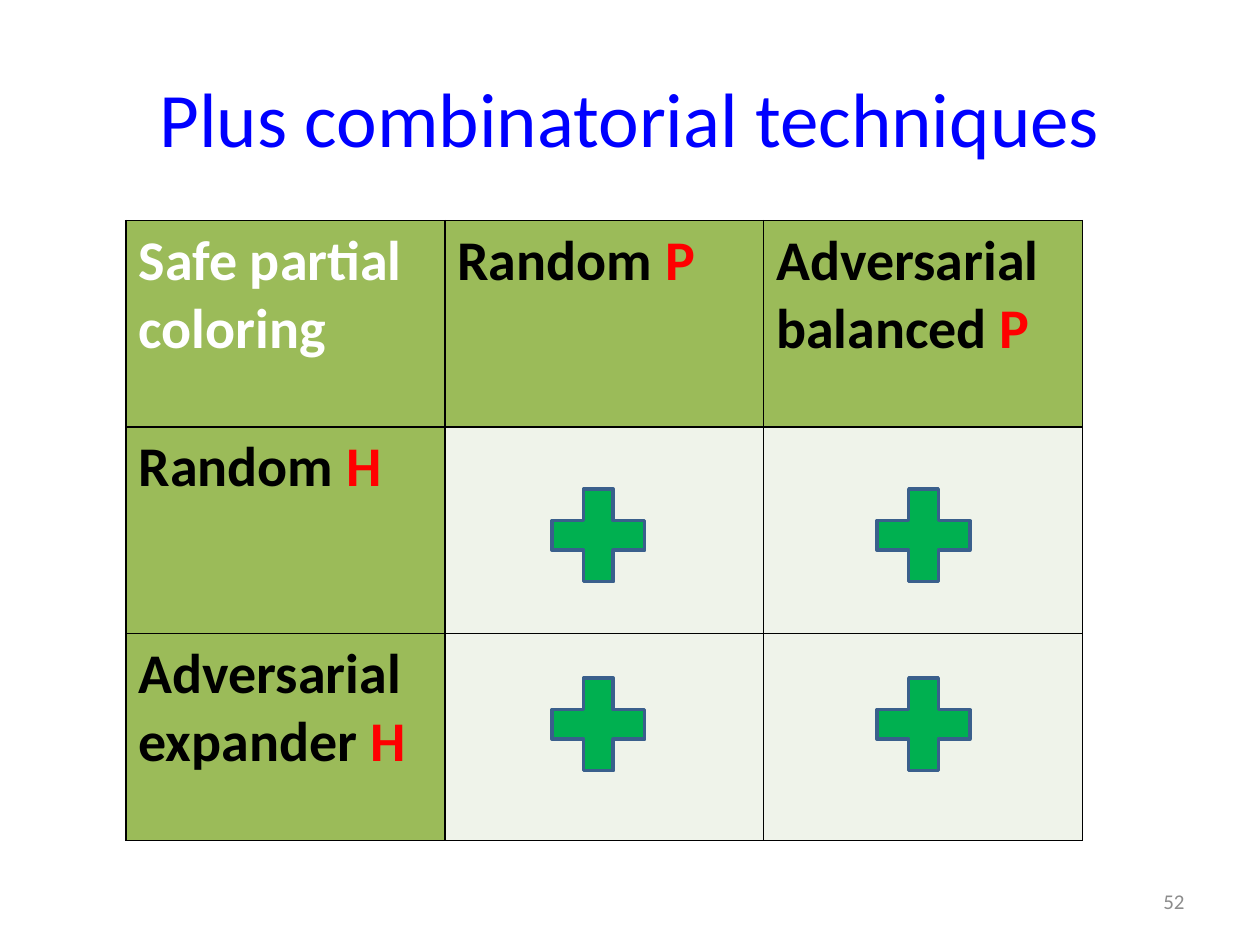
from dataclasses import dataclass
from itertools import product

from lxml.etree import SubElement
from pptx import Presentation
from pptx.dml.color import RGBColor as Color
from pptx.enum.shapes import MSO_SHAPE as Shape
from pptx.enum.text import MSO_ANCHOR as Anchor, PP_ALIGN as Align
from pptx.oxml.ns import qn
from pptx.util import Inches, Pt


@dataclass(frozen=True)
class Theme:
    font: str = "Calibri"
    title_size: int = 44
    table_size: int = 32
    number_size: int = 12
    title: str = "0000FF"
    number: str = "8C8C8C"
    light: str = "FFFFFF"
    dark: str = "000000"
    accent: str = "FF0000"
    header_fill: str = "9BBB59"
    body_fill: str = "EFF3EA"
    plus_fill: str = "00B050"
    plus_line: str = "3A5F8C"


THEME = Theme()
COLUMN_WIDTH, ROW_HEIGHT = 2.53, 1.64
# Header cells by (row, column): runs of text and colour
HEADERS = {
    (0, 0): [("Safe partial coloring", THEME.light)],
    (0, 1): [("Random ", THEME.dark), ("P", THEME.accent)],
    (0, 2): [("Adversarial balanced ", THEME.dark), ("P", THEME.accent)],
    (1, 0): [("Random ", THEME.dark), ("H", THEME.accent)],
    (2, 0): [("Adversarial expander ", THEME.dark), ("H", THEME.accent)],
}


def set_all(target, values):
    for name, value in values.items():
        setattr(target, name, value)


def write(frame, runs, size, bold=False, align=None):
    """Fill the first paragraph with (text, colour) runs."""
    para = frame.paragraphs[0]
    para.alignment = align
    for text, color in runs:
        span = para.add_run()
        span.text = text
        set_all(span.font, {"name": THEME.font, "size": Pt(size), "bold": bold})
        span.font.color.rgb = Color.from_string(color)


def place(shape, left, top, width, height):
    set_all(shape, {"left": Inches(left), "top": Inches(top),
                    "width": Inches(width), "height": Inches(height)})


def add_title(page, text):
    title = page.shapes.title
    place(title, 0.5, 0.3, 9, 1.25)
    title.text_frame.vertical_anchor = Anchor.MIDDLE
    write(title.text_frame, [(text, THEME.title)], THEME.title_size, align=Align.CENTER)


def add_page_number(page, text):
    box = page.shapes.add_textbox(Inches(7.17), Inches(6.95), Inches(2.33), Inches(0.4))
    set_all(box.text_frame, {"word_wrap": True, "vertical_anchor": Anchor.MIDDLE})
    write(box.text_frame, [(text, THEME.number)], THEME.number_size, align=Align.RIGHT)


def style_cell(cell, fill):
    """Draw thin borders on all sides, then the fill, in schema order."""
    properties = cell._tc.get_or_add_tcPr()
    for side in ("a:lnL", "a:lnR", "a:lnT", "a:lnB"):
        line = SubElement(properties, qn(side), w=str(Pt(1)))
        solid = SubElement(line, qn("a:solidFill"))
        SubElement(solid, qn("a:srgbClr"), val=THEME.dark)
    cell.fill.solid()
    cell.fill.fore_color.rgb = Color.from_string(fill)


def add_grid(page):
    table = page.shapes.add_table(3, 3, Inches(1), Inches(1.75), Inches(3 * COLUMN_WIDTH),
                                  Inches(3 * ROW_HEIGHT)).table
    for column in table.columns:
        column.width = Inches(COLUMN_WIDTH)
    for row in table.rows:
        row.height = Inches(ROW_HEIGHT)
    for position in product(range(3), repeat=2):
        cell = table.cell(*position)
        runs = HEADERS.get(position, [])
        style_cell(cell, THEME.header_fill if runs else THEME.body_fill)
        write(cell.text_frame, runs, THEME.table_size, bold=True)


def add_plus(page, left, top):
    plus = page.shapes.add_shape(Shape.MATH_PLUS, Inches(left), Inches(top),
                                 Inches(1), Inches(1))
    plus.shadow.inherit = False
    plus.fill.solid()
    plus.fill.fore_color.rgb = Color.from_string(THEME.plus_fill)
    plus.line.color.rgb = Color.from_string(THEME.plus_line)
    plus.line.width = Pt(2)


def main():
    deck = Presentation()
    set_all(deck, {"slide_width": Inches(10), "slide_height": Inches(7.5)})
    page = deck.slides.add_slide(deck.slide_layouts.get_by_name("Title Only"))
    add_title(page, "Plus combinatorial techniques")
    add_page_number(page, "52")
    add_grid(page)
    for left, top in product((4.25, 6.83), (3.75, 5.25)):
        add_plus(page, left, top)
    deck.save("out.pptx")


if __name__ == "__main__":
    main()
